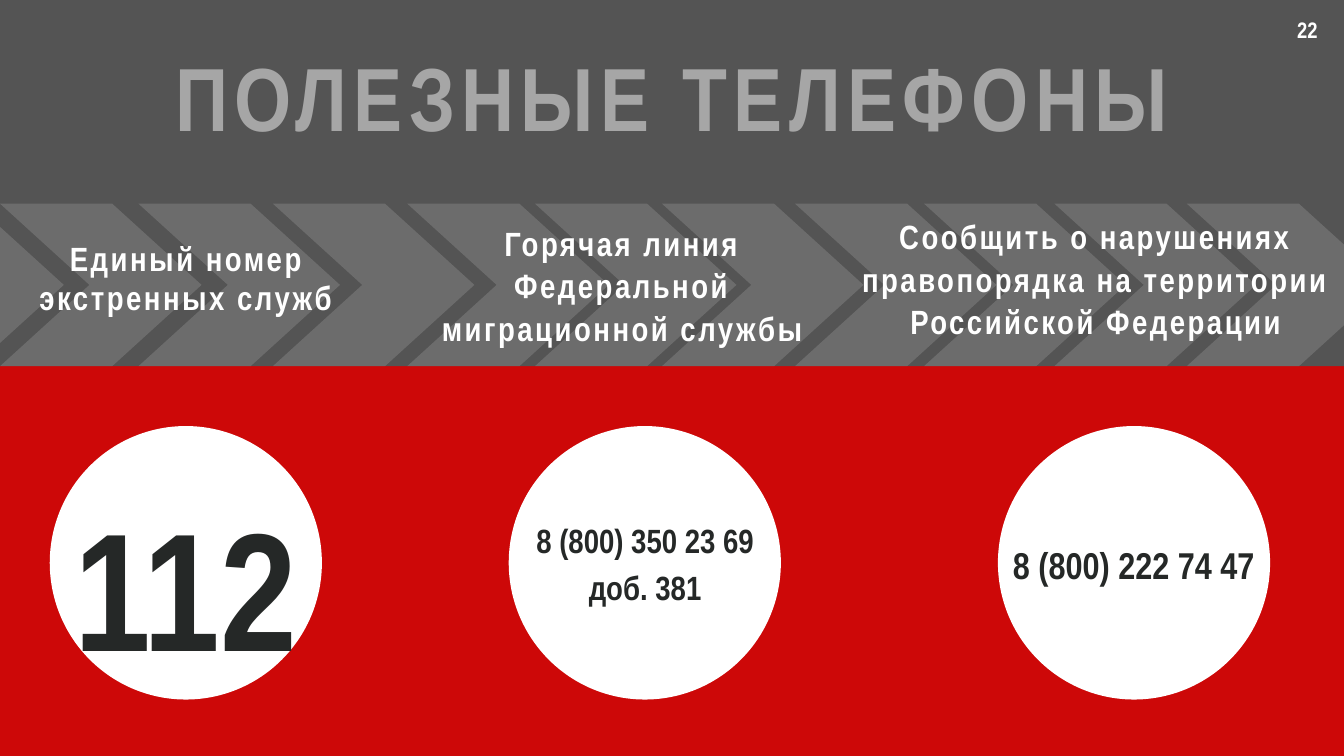
from dataclasses import dataclass

from lxml import etree
from pptx import Presentation
from pptx.dml.color import RGBColor
from pptx.enum import shapes, text
from pptx.oxml import ns
from pptx.util import Inches, Pt


@dataclass(frozen=True)
class Theme:
    font: str = "Arial Narrow"
    red: str = "CD0808"
    dark: str = "545454"
    gray: str = "A6A6A6"
    white: str = "FFFFFF"
    ink: str = "252827"
    title_size: int = 96
    label_size: int = 36
    phone_size: int = 40
    emergency_size: int = 180
    page_size: int = 24


THEME = Theme()
SLIDE_WIDTH, SLIDE_HEIGHT = 20, 11.25
HEADER_HEIGHT = 5.45
BAND_TOP = 3.03
CIRCLE_TOP = 6.34
CHEVRON_LEFTS = (-2.05, 0, 2.06, 4.06, 6.06, 7.96, 9.85, 11.83, 13.75, 15.69, 17.66)

# Each label and phone: lines, box, line spacing
LABELS = (
    (("Единый номер", "экстренных служб"), (0.32, 3.56, 4.89, 1.16), 41.8),
    (("Горячая линия Федеральной миграционной службы",), (6.47, 3.28, 5.58, 1.89), 45.7),
    (("Сообщить о нарушениях правопорядка на территории Российской Федерации",),
     (12.61, 3.18, 7.39, 1.88), 45.7),
)
# Each phone: circle left, lines, text box, size
PHONES = (
    (0.74, ("112",), (0.73, 6.69, 4.07, 3.36), THEME.emergency_size),
    (7.57, ("8 (800) 350 23 69", "доб. 381"), (7.22, 7.64, 4.76, 1.38), THEME.label_size),
    (14.85, ("8 (800) 222 74 47",), (14.49, 7.95, 4.76, 0.75), THEME.phone_size),
)


def add_filled(slide, preset, box, color, opacity=None):
    shape = slide.shapes.add_shape(preset, *map(Inches, box))
    shape.shadow.inherit = False
    shape.fill.solid()
    shape.fill.fore_color.rgb = RGBColor.from_string(color)
    shape.line.fill.background()
    if opacity is not None:
        color_element = shape.fill._xPr.find(".//" + ns.qn("a:srgbClr"))
        etree.SubElement(color_element, ns.qn("a:alpha"), val=str(opacity * 1000))
    return shape


def add_text(slide, lines, box, *, size, color, line_spacing, tracking=0):
    frame = slide.shapes.add_textbox(*map(Inches, box)).text_frame
    frame.word_wrap = True
    frame.margin_left = frame.margin_right = frame.margin_top = frame.margin_bottom = 0
    for index, line in enumerate(lines):
        paragraph = frame.add_paragraph() if index else frame.paragraphs[0]
        paragraph.alignment = text.PP_ALIGN.CENTER
        paragraph.line_spacing = Pt(line_spacing)
        run = paragraph.add_run()
        run.text = line
        run.font.name = THEME.font
        run.font.size = Pt(size)
        run.font.bold = True
        run.font.color.rgb = RGBColor.from_string(color)
        if tracking:
            run._r.get_or_add_rPr().set("spc", str(round(tracking * 100)))


def add_header(slide, box):
    left, top, width, _ = box
    add_filled(slide, shapes.MSO_SHAPE.RECTANGLE, box, THEME.dark)
    add_text(slide, ["ПОЛЕЗНЫЕ ТЕЛЕФОНЫ"], (left + 0.43, top + 0.57, width - 0.86, 1.64),
             size=THEME.title_size, color=THEME.gray, line_spacing=119, tracking=6.9)
    add_text(slide, ["22"], (left + width - 1.09, top + 0.17, 1.09, 0.44),
             size=THEME.page_size, color=THEME.white, line_spacing=33.6)


def add_label_band(slide, box):
    left, top, _, height = box
    # Translucent chevrons behind the labels
    for offset in CHEVRON_LEFTS:
        chevron = add_filled(slide, shapes.MSO_SHAPE.CHEVRON,
                             (left + offset, top, 3, height), THEME.gray, opacity=30)
        chevron.adjustments[0] = 0.55
    for lines, (x, y, width, label_height), line_spacing in LABELS:
        add_text(slide, lines, (left + x, top + y - BAND_TOP, width, label_height),
                 size=THEME.label_size, color=THEME.white,
                 line_spacing=line_spacing, tracking=2.7)


def add_phones(slide, box):
    left, top, _, height = box
    for circle_left, lines, (x, y, width, text_height), size in PHONES:
        add_filled(slide, shapes.MSO_SHAPE.OVAL,
                   (left + circle_left, top, 4.05, height), THEME.white)
        add_text(slide, lines, (left + x, top + y - CIRCLE_TOP, width, text_height),
                 size=size, color=THEME.ink, line_spacing=size * 1.4)


def main():
    presentation = Presentation()
    presentation.slide_width = Inches(SLIDE_WIDTH)
    presentation.slide_height = Inches(SLIDE_HEIGHT)
    slide = presentation.slides.add_slide(presentation.slide_layouts[6])
    slide.background.fill.solid()
    slide.background.fill.fore_color.rgb = RGBColor.from_string(THEME.red)

    add_header(slide, (0, 0, SLIDE_WIDTH, HEADER_HEIGHT))
    add_label_band(slide, (0, BAND_TOP, SLIDE_WIDTH, HEADER_HEIGHT - BAND_TOP))
    add_phones(slide, (0, CIRCLE_TOP, SLIDE_WIDTH, 4.07))
    presentation.save("out.pptx")


if __name__ == "__main__":
    main()
